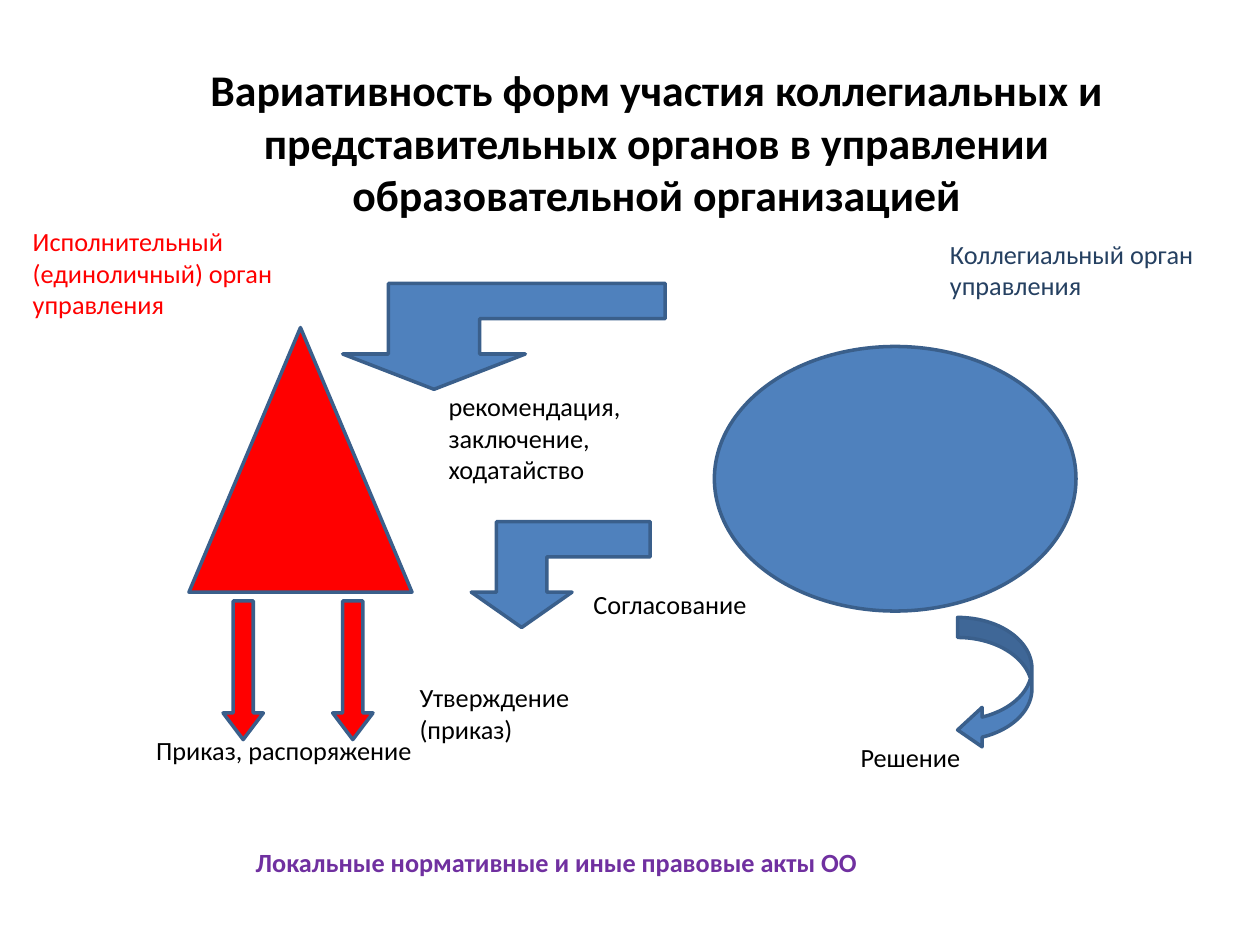
from dataclasses import dataclass

from pptx import Presentation
from pptx.dml.color import RGBColor
from pptx.enum.shapes import MSO_SHAPE
from pptx.enum.text import MSO_ANCHOR, PP_ALIGN
from pptx.shapes.autoshape import Shape
from pptx.slide import Slide
from pptx.util import Inches, Pt

BLACK, RED, BLUE = "000000", "FF0000", "4F81BD"
NAVY, PURPLE, OUTLINE = "254061", "7030A0", "3A5F8B"


@dataclass
class Label:
    lines: list[str]
    left: float
    top: float
    width: float
    height: float
    color: str = BLACK
    size: float = 15
    bold: bool = False
    align: PP_ALIGN = PP_ALIGN.LEFT
    anchor: MSO_ANCHOR = MSO_ANCHOR.TOP


@dataclass
class Figure:
    kind: MSO_SHAPE
    left: float
    top: float
    width: float
    height: float
    fill: str
    adjustments: tuple[float, ...] = ()


@dataclass
class BentArrow:
    left: float
    top: float
    head_width: float
    width: float


TITLE = Label(
    ["Вариативность форм участия коллегиальных и представительных органов "
     "в управлении образовательной организацией"],
    0.71, 0.5, 9, 1.25, size=25, bold=True, align=PP_ALIGN.CENTER, anchor=MSO_ANCHOR.MIDDLE)

LABELS = [
    Label(["Исполнительный (единоличный) орган управления"], 0.2, 1.76, 2.09, 0.81, RED),
    Label(["Коллегиальный орган управления"], 7.48, 1.86, 2.16, 0.56, NAVY),
    Label(["рекомендация,", "заключение,", "ходатайство"], 3.5, 3.07, 1.81, 0.81),
    Label(["Согласование"], 4.65, 4.64, 1.65, 0.31),
    Label(["Утверждение", "(приказ)"], 3.27, 5.38, 1.66, 0.56),
    Label(["Приказ, распоряжение"], 1.18, 5.8, 2.16, 0.31),
    Label(["Решение"], 6.77, 5.85, 1.26, 0.31),
    Label(["Локальные нормативные и иные правовые акты ОО"],
          1.97, 6.69, 6.46, 0.31, PURPLE, bold=True),
]

FIGURES = [
    Figure(MSO_SHAPE.ISOSCELES_TRIANGLE, 1.5, 2.6, 1.77, 2.1, RED),
    Figure(MSO_SHAPE.OVAL, 5.67, 2.75, 2.87, 2.1, BLUE),
    *(Figure(MSO_SHAPE.DOWN_ARROW, left, 4.77, 0.32, 1.1, RED, (0.5, 0.66))
      for left in (1.77, 2.64)),
    Figure(MSO_SHAPE.CURVED_LEFT_ARROW, 7.6, 4.9, 0.59, 1.05, BLUE, (0.27, 0.53, 0.33)),
]

BENT_ARROWS = [BentArrow(2.72, 2.25, 1.45, 2.56), BentArrow(3.74, 4.14, 0.8, 1.42)]


def rgb(color: str) -> RGBColor:
    return RGBColor.from_string(color)


def paint(shape: Shape, fill: str) -> None:
    shape.shadow.inherit = False
    shape.fill.solid()
    shape.fill.fore_color.rgb = rgb(fill)
    shape.line.color.rgb = rgb(OUTLINE)
    shape.line.width = Pt(2)


def add_label(page: Slide, label: Label) -> None:
    box = page.shapes.add_textbox(
        Inches(label.left), Inches(label.top), Inches(label.width), Inches(label.height))
    frame = box.text_frame
    frame.word_wrap = True
    frame.vertical_anchor = label.anchor
    frame.margin_left = frame.margin_right = Inches(0.06)
    frame.margin_top = frame.margin_bottom = Inches(0.03)
    for index, line in enumerate(label.lines):
        para = frame.add_paragraph() if index else frame.paragraphs[0]
        para.alignment = label.align
        span = para.add_run()
        span.text = line
        span.font.name = "Calibri"
        span.font.size = Pt(label.size)
        span.font.bold = label.bold
        span.font.color.rgb = rgb(label.color)


def add_figure(page: Slide, figure: Figure) -> None:
    shape = page.shapes.add_shape(
        figure.kind, Inches(figure.left), Inches(figure.top),
        Inches(figure.width), Inches(figure.height))
    for index, value in enumerate(figure.adjustments):
        shape.adjustments[index] = value
    paint(shape, figure.fill)


def add_bent_arrow(page: Slide, arrow: BentArrow) -> None:
    """The shaft is half as wide as the head; bar, gap and head are equally high."""
    step = 0.28
    quarter = arrow.head_width / 4
    head_left, shaft_left, tip, shaft_right, head_right = (
        arrow.left + quarter * count for count in range(5))
    right = arrow.left + arrow.width
    top, bar_bottom, head_top, bottom = (arrow.top + step * count for count in range(4))
    corners = [
        (tip, bottom), (head_right, head_top), (shaft_right, head_top),
        (shaft_right, bar_bottom), (right, bar_bottom), (right, top),
        (shaft_left, top), (shaft_left, head_top), (head_left, head_top),
    ]
    points = [(Inches(x), Inches(y)) for x, y in corners]
    builder = page.shapes.build_freeform(*points[0])
    builder.add_line_segments(points[1:], close=True)
    paint(builder.convert_to_shape(), BLUE)


def main() -> None:
    deck = Presentation()
    deck.slide_width, deck.slide_height = Inches(10), Inches(7.5)
    page = deck.slides.add_slide(deck.slide_layouts[6])

    # Governing bodies and the arrows between them
    for figure in FIGURES:
        add_figure(page, figure)
    for arrow in BENT_ARROWS:
        add_bent_arrow(page, arrow)

    # Title and captions
    for label in [TITLE, *LABELS]:
        add_label(page, label)

    deck.save("out.pptx")


if __name__ == "__main__":
    main()
